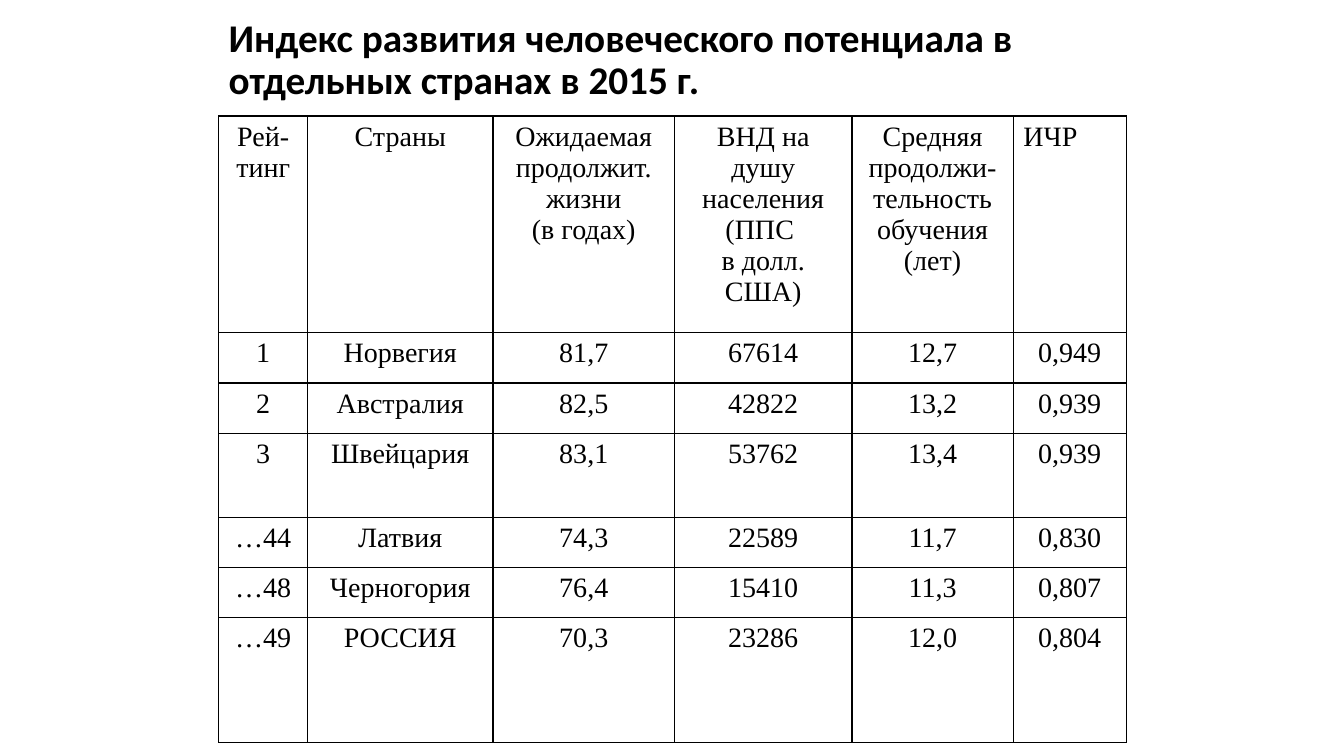
from lxml import etree
from pptx import Presentation
from pptx.dml.color import RGBColor
from pptx.enum.text import MSO_ANCHOR, PP_ALIGN
from pptx.oxml.ns import qn
from pptx.util import Inches, Pt

LEFT, CENTER = PP_ALIGN.LEFT, PP_ALIGN.CENTER
MIDDLE = MSO_ANCHOR.MIDDLE
COLORS = {"ink": "000000", "paper": "FFFFFF"}
TITLE_FORMAT = {"name": "Calibri", "size": Pt(28), "bold": True}
TABLE_FORMAT = {"name": "Times New Roman", "size": Pt(20), "bold": False}

TITLE = "Индекс развития человеческого потенциала в отдельных странах в 2015 г."
COLUMN_WIDTHS = [0.88, 1.84, 1.8, 1.76, 1.6, 1.12]
ROW_HEIGHTS = [2.15, 0.5, 0.5, 0.83, 0.5, 0.5, 1.24]
COUNTRY_ROWS = [
    ["Рей-тинг", "Страны", "Ожидаемая продолжит. жизни\n(в годах)",
     "ВНД на душу населения\n(ППС \nв долл. США)",
     "Средняя\nпродолжи-\nтельность\nобучения\n(лет)", "ИЧР"],
    ["1", "Норвегия", "81,7", "67614", "12,7", "0,949"],
    ["2", "Австралия", "82,5", "42822", "13,2", "0,939"],
    ["3", "Швейцария", "83,1", "53762", "13,4", "0,939"],
    ["…44", "Латвия", "74,3", "22589", "11,7", "0,830"],
    ["…48", "Черногория", "76,4", "15410", "11,3", "0,807"],
    ["…49", "РОССИЯ", "70,3", "23286", "12,0", "0,804"],
]


class SlideBuilder:
    def __init__(self, page):
        self.page = page

    def fill_text(self, frame, text, style, align, spacing=None):
        frame.text = text
        for para in frame.paragraphs:
            para.alignment = align
            para.line_spacing = spacing
            for span in para.runs:
                for name, value in style.items():
                    setattr(span.font, name, value)
                span.font.color.rgb = RGBColor.from_string(COLORS["ink"])

    def title(self, text, left, top, width, height):
        box = self.page.shapes.add_textbox(
            Inches(left), Inches(top), Inches(width), Inches(height))
        box.text_frame.word_wrap = True
        box.text_frame.vertical_anchor = MIDDLE
        self.fill_text(box.text_frame, text, TITLE_FORMAT, LEFT, 0.9)

    def border(self, cell):
        properties = cell._tc.get_or_add_tcPr()
        for side in ("lnL", "lnR", "lnT", "lnB"):
            line = etree.SubElement(properties, qn(f"a:{side}"), w=str(Pt(1)))
            fill = etree.SubElement(line, qn("a:solidFill"))
            etree.SubElement(fill, qn("a:srgbClr"), val=COLORS["ink"])

    def table(self, rows, left, top, widths, heights):
        table = self.page.shapes.add_table(
            len(rows), len(widths), Inches(left), Inches(top),
            Inches(sum(widths)), Inches(sum(heights))).table
        table.first_row = table.horz_banding = False
        for column, width in zip(table.columns, widths):
            column.width = Inches(width)
        for row, height, texts in zip(table.rows, heights, rows):
            row.height = Inches(height)
            for cell, text in zip(row.cells, texts):
                align = LEFT if text == "ИЧР" else CENTER
                self.fill_text(cell.text_frame, text, TABLE_FORMAT, align)
                self.border(cell)
                cell.fill.solid()
                cell.fill.fore_color.rgb = RGBColor.from_string(COLORS["paper"])


def main():
    deck = Presentation()
    deck.slide_width, deck.slide_height = Inches(13.33), Inches(7.5)
    builder = SlideBuilder(deck.slides.add_slide(deck.slide_layouts[6]))
    builder.title(TITLE, 2.17, 0.13, 9, 0.95)
    builder.table(COUNTRY_ROWS, 2.17, 1.15, COLUMN_WIDTHS, ROW_HEIGHTS)
    deck.save("out.pptx")


if __name__ == "__main__":
    main()
